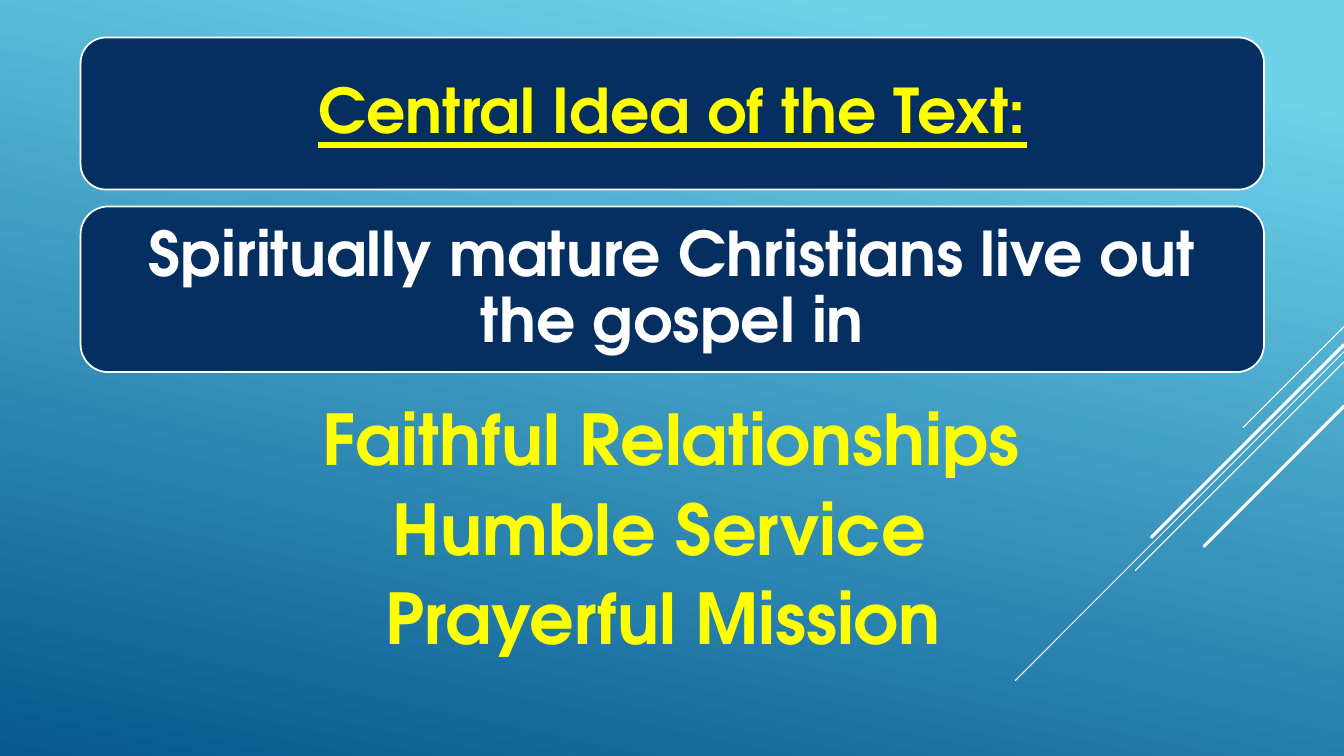
from dataclasses import dataclass

from lxml import etree
from pptx import Presentation
from pptx.dml.color import RGBColor
from pptx.enum.shapes import MSO_CONNECTOR, MSO_SHAPE
from pptx.enum.text import MSO_ANCHOR, MSO_AUTO_SIZE, PP_ALIGN
from pptx.oxml.ns import qn
from pptx.util import Pt


@dataclass(frozen=True)
class Theme:
    font: str = "TeX Gyre Adventor"
    sky: RGBColor = RGBColor(0x6E, 0xD2, 0xEB)
    ocean: RGBColor = RGBColor(0x06, 0x58, 0x8E)
    navy: RGBColor = RGBColor(0x05, 0x2F, 0x61)
    white: RGBColor = RGBColor(0xFF, 0xFF, 0xFF)
    yellow: RGBColor = RGBColor(0xFF, 0xFF, 0x00)
    heading_size: int = 44
    item_size: int = 50


THEME = Theme()
SLIDE_W, SLIDE_H = 960, 540
LEFT, WIDTH = 57.6, 845.3
CARD_PAD = 5.7

# Top and height of each card
TITLE_CARD = (26.8, 108.6)
IDEA_CARD = (147.5, 118.3)

# Height at the right edge, horizontal run, line width
RAYS = [
    (233.3, 72, 0.75),
    (251.3, 234.7, 0.75),
    (258.5, 149, 0.75),
    (246.2, 137.5, 2.25),
    (290.2, 100, 2.25),
]

# Text and left indent
ITEMS = [
    ("Faithful Relationships", 146),
    ("Humble Service", 196.5),
    ("Prayerful Mission", 191),
]


def set_background(s):
    fill = s.background.fill
    fill.gradient()
    fill.gradient_angle = 360 - 102
    stops = ((0.1, THEME.sky), (1, THEME.ocean))
    for stop, (position, color) in zip(fill.gradient_stops, stops):
        stop.position = position
        stop.color.rgb = color


def add_ray(s, top, run, width):
    """Draw a 45-degree line down and left from the right edge."""
    line = s.shapes.add_connector(
        MSO_CONNECTOR.STRAIGHT,
        Pt(SLIDE_W), Pt(top), Pt(SLIDE_W - run), Pt(top + run))
    line.line.color.rgb = THEME.white
    line.line.width = Pt(width)
    line.line._get_or_add_ln().set("cap", "rnd")
    etree.SubElement(line.element.spPr, qn("a:effectLst"))


def add_card(s, top, height):
    card = s.shapes.add_shape(MSO_SHAPE.ROUNDED_RECTANGLE,
                              Pt(LEFT), Pt(top), Pt(WIDTH), Pt(height))
    card.shadow.inherit = False
    card.fill.solid()
    card.fill.fore_color.rgb = THEME.navy
    card.line.color.rgb = THEME.white
    card.line.width = Pt(1.25)


def format_frame(tf, anchor, left, top, right, bottom):
    settings = {
        "word_wrap": True, "auto_size": MSO_AUTO_SIZE.NONE,
        "vertical_anchor": anchor,
        "margin_left": Pt(left), "margin_top": Pt(top),
        "margin_right": Pt(right), "margin_bottom": Pt(bottom),
    }
    for name, value in settings.items():
        setattr(tf, name, value)


def write(p, text, size, color, align, gap, underline=False):
    """Fill a paragraph; gap is the space after as a share of the size."""
    layout = {"alignment": align, "line_spacing": 0.9,
              "space_before": Pt(0), "space_after": Pt(size * gap)}
    for name, value in layout.items():
        setattr(p, name, value)
    r = p.add_run()
    r.text = text
    r.font.color.rgb = color
    style = {"name": THEME.font, "size": Pt(size), "bold": True,
             "underline": underline}
    for name, value in style.items():
        setattr(r.font, name, value)


def fill_card(sp, card, text, color, underline=False):
    """Place a text shape inside a card and write its centred line."""
    top, height = card
    place = {"left": LEFT + CARD_PAD, "top": top + CARD_PAD,
             "width": WIDTH - 2 * CARD_PAD, "height": height - 2 * CARD_PAD}
    for name, value in place.items():
        setattr(sp, name, Pt(value))
    format_frame(sp.text_frame, MSO_ANCHOR.MIDDLE, 13, 13, 13, 13)
    write(sp.text_frame.paragraphs[0], text, THEME.heading_size, color,
          PP_ALIGN.CENTER, 0.35, underline)


def add_items(s):
    sp = s.shapes.add_textbox(Pt(LEFT), Pt(283), Pt(WIDTH), Pt(203.8))
    tf = sp.text_frame
    format_frame(tf, MSO_ANCHOR.TOP, 26.6, 6.5, 36, 6.5)
    for i, (text, indent) in enumerate(ITEMS):
        p = tf.add_paragraph() if i else tf.paragraphs[0]
        write(p, text, THEME.item_size, THEME.yellow, PP_ALIGN.LEFT, 0.2)
        p._p.get_or_add_pPr().set("marL", str(Pt(indent)))


def main():
    prs = Presentation()
    prs.slide_width, prs.slide_height = Pt(SLIDE_W), Pt(SLIDE_H)
    s = prs.slides.add_slide(prs.slide_layouts[5])

    # Backdrop
    set_background(s)
    for ray in RAYS:
        add_ray(s, *ray)

    # Title card, with the title brought in front of it
    add_card(s, *TITLE_CARD)
    title = s.shapes.title
    title.element.getparent().append(title.element)
    fill_card(title, TITLE_CARD, "Central Idea of the Text:",
              THEME.yellow, underline=True)

    # Main idea card
    add_card(s, *IDEA_CARD)
    idea = s.shapes.add_textbox(0, 0, 0, 0)
    fill_card(idea, IDEA_CARD,
              "Spiritually mature Christians live out the gospel in",
              THEME.white)

    # Three ways to live it out
    add_items(s)
    prs.save("out.pptx")


if __name__ == "__main__":
    main()
